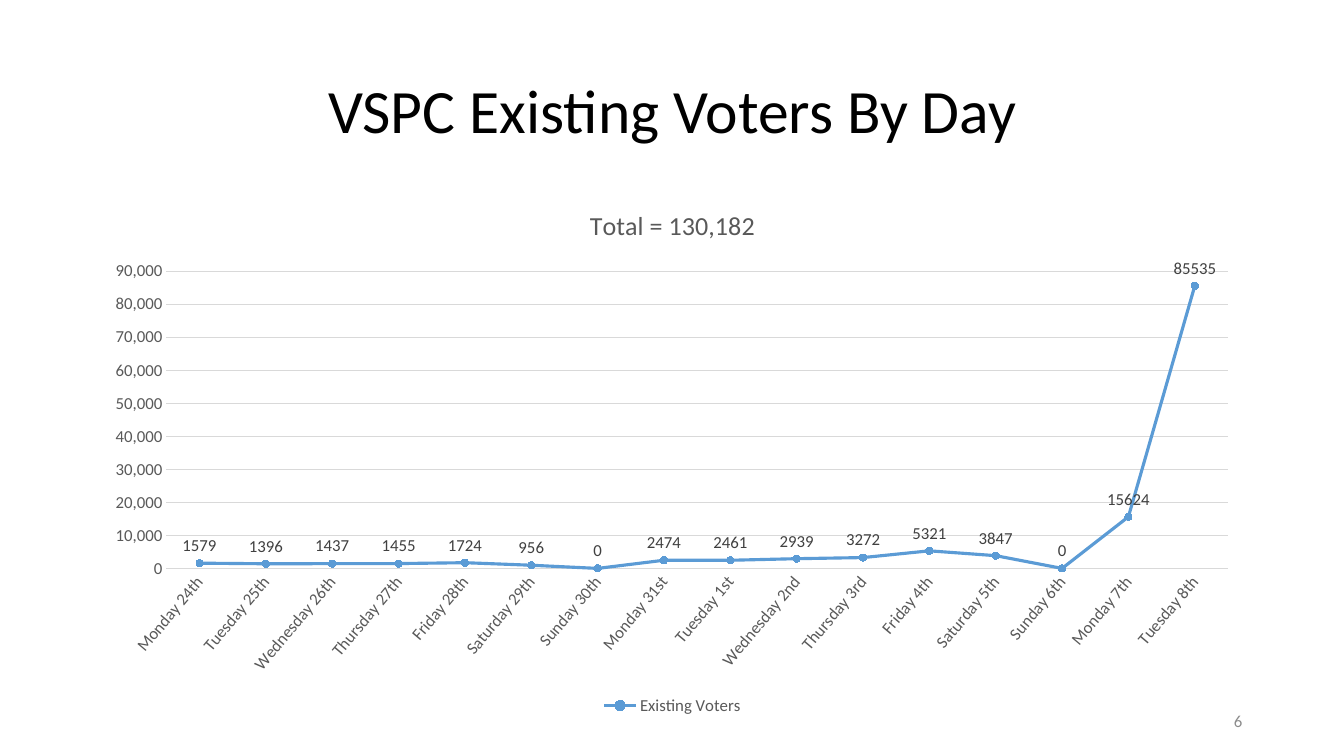
from lxml import etree
from pptx import Presentation
from pptx.chart.data import CategoryChartData
from pptx.dml.color import RGBColor
from pptx.enum.chart import (XL_CHART_TYPE, XL_LABEL_POSITION, XL_LEGEND_POSITION,
                             XL_MARKER_STYLE, XL_TICK_MARK)
from pptx.enum.text import MSO_ANCHOR, PP_ALIGN
from pptx.oxml.ns import qn
from pptx.util import Inches, Pt

VOTERS_BY_DAY = {
    "Monday 24th": 1579, "Tuesday 25th": 1396, "Wednesday 26th": 1437,
    "Thursday 27th": 1455, "Friday 28th": 1724, "Saturday 29th": 956,
    "Sunday 30th": 0, "Monday 31st": 2474, "Tuesday 1st": 2461,
    "Wednesday 2nd": 2939, "Thursday 3rd": 3272, "Friday 4th": 5321,
    "Saturday 5th": 3847, "Sunday 6th": 0, "Monday 7th": 15624,
    "Tuesday 8th": 85535,
}
CHART_BOX = (0.92, 1.85, 11.5, 5.29)
PLOT_BOX = (0.73, 0.84, 10.53, 2.95)  # inches, inside the chart
DAY_ANGLE = -50


def color(hex_value):
    return RGBColor.from_string(hex_value)


def set_format(target, values):
    for name, value in values.items():
        setattr(target, name, value)


class VoterSlide:
    font_name = "Calibri"
    accent, grid, gray, label_gray = "5B9BD5", "D9D9D9", "595959", "404040"

    def __init__(self, deck):
        self.slide = deck.slides.add_slide(deck.slide_layouts[6])

    def style_font(self, font, size, hex_value):
        set_format(font, {"name": self.font_name, "size": Pt(size), "bold": False})
        font.color.rgb = color(hex_value)

    def style_line(self, line, hex_value, width):
        line.color.rgb = color(hex_value)
        line.width = Pt(width)

    def add_text(self, text, box, size, hex_value, align, spacing=1.0):
        frame = self.slide.shapes.add_textbox(*map(Inches, box)).text_frame
        set_format(frame, {"word_wrap": True, "vertical_anchor": MSO_ANCHOR.MIDDLE})
        paragraph = frame.paragraphs[0]
        set_format(paragraph, {"alignment": align, "line_spacing": spacing})
        run = paragraph.add_run()
        run.text = text
        self.style_font(run.font, size, hex_value)

    def add_line_chart(self, title, series_name, values, box, plot_box):
        data = CategoryChartData(number_format="General")
        data.categories = list(values)
        data.add_series(series_name, list(values.values()))
        chart = self.slide.shapes.add_chart(
            XL_CHART_TYPE.LINE_MARKERS, *map(Inches, box), data).chart
        self.style_font(chart.font, 10, "000000")
        self.add_chart_title(chart, title)
        self.style_axes(chart)
        self.style_series(chart.plots[0])
        self.place_plot(chart, box, plot_box)

        # Legend
        chart.has_legend = True
        set_format(chart.legend, {"position": XL_LEGEND_POSITION.BOTTOM,
                                  "include_in_layout": False})
        self.style_font(chart.legend.font, 12, self.gray)

    def add_chart_title(self, chart, title):
        chart.has_title = True
        frame = chart.chart_title.text_frame
        frame.text = title
        self.style_font(frame.paragraphs[0].runs[0].font, 18.6, self.gray)

    def style_axes(self, chart):
        days, counts = chart.category_axis, chart.value_axis
        for axis in (days, counts):
            set_format(axis, {"major_tick_mark": XL_TICK_MARK.NONE,
                              "minor_tick_mark": XL_TICK_MARK.NONE})
            self.style_font(axis.tick_labels.font, 12, self.gray)
        self.style_line(days.format.line, self.grid, 0.75)
        # Slant of the day names
        days_body = days._element.find(qn("c:txPr")).find(qn("a:bodyPr"))
        days_body.set("rot", str(DAY_ANGLE * 60000))
        days_body.set("vert", "horz")

        set_format(counts, {"minimum_scale": 0, "maximum_scale": 90000,
                            "major_unit": 10000, "has_major_gridlines": True})
        set_format(counts.tick_labels, {"number_format": "#,##0",
                                        "number_format_is_linked": False})
        counts.format.line.fill.background()
        self.style_line(counts.major_gridlines.format.line, self.grid, 0.75)

    def style_series(self, plot):
        plot.vary_by_categories = False
        voters = plot.series[0]
        voters.smooth = False
        self.style_line(voters.format.line, self.accent, 2.25)
        marker = voters.marker
        set_format(marker, {"style": XL_MARKER_STYLE.CIRCLE, "size": 5})
        marker.format.fill.solid()
        marker.format.fill.fore_color.rgb = color(self.accent)
        self.style_line(marker.format.line, self.accent, 0.75)
        labels = voters.data_labels
        set_format(labels, {"show_value": True, "position": XL_LABEL_POSITION.ABOVE})
        self.style_font(labels.font, 12, self.label_gray)

    def place_plot(self, chart, box, plot_box):
        plot_area = chart._chartSpace.find(".//" + qn("c:plotArea"))
        layout = plot_area.find(qn("c:layout"))
        if layout is None:
            layout = etree.Element(qn("c:layout"))
            plot_area.insert(0, layout)
        manual = etree.SubElement(layout, qn("c:manualLayout"))
        settings = {"layoutTarget": "inner", "xMode": "edge", "yMode": "edge"}
        for tag, length, whole in zip("xywh", plot_box, box[2:] * 2):
            settings[tag] = length / whole
        for tag, value in settings.items():
            etree.SubElement(manual, qn("c:" + tag)).set("val", str(value))


def main():
    deck = Presentation()
    set_format(deck, {"slide_width": Inches(13.33), "slide_height": Inches(7.5)})
    page = VoterSlide(deck)

    # Heading
    page.add_text("VSPC Existing Voters By Day", (0.92, 0.4, 11.5, 1.45),
                  44, "000000", PP_ALIGN.CENTER, 0.9)
    # Daily voter counts
    page.add_line_chart("Total = 130,182", "Existing Voters", VOTERS_BY_DAY,
                        CHART_BOX, PLOT_BOX)
    # Page number
    page.add_text("6", (9.42, 6.95, 3, 0.4), 12, "8C8C8C", PP_ALIGN.RIGHT)

    deck.save("out.pptx")


if __name__ == "__main__":
    main()
